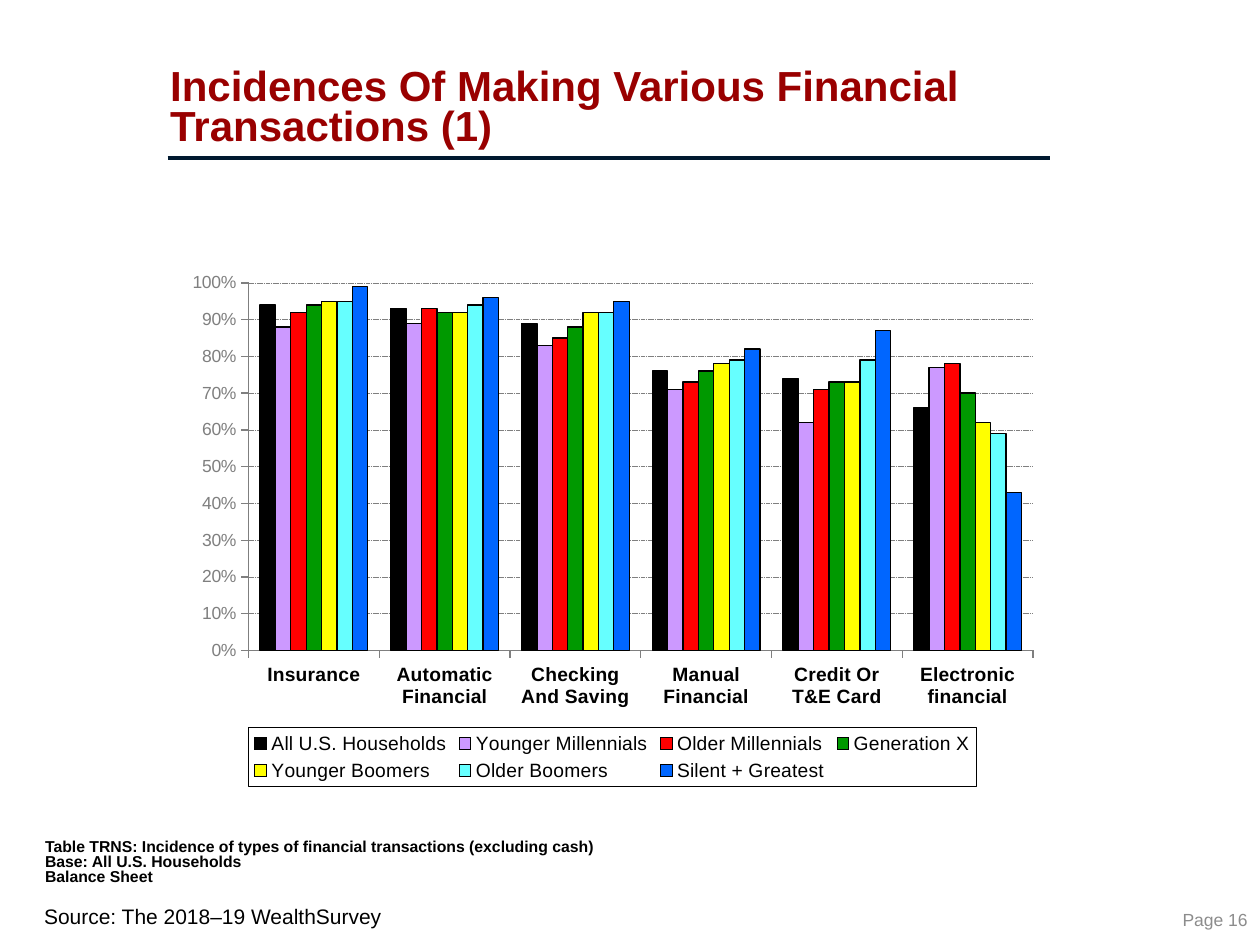
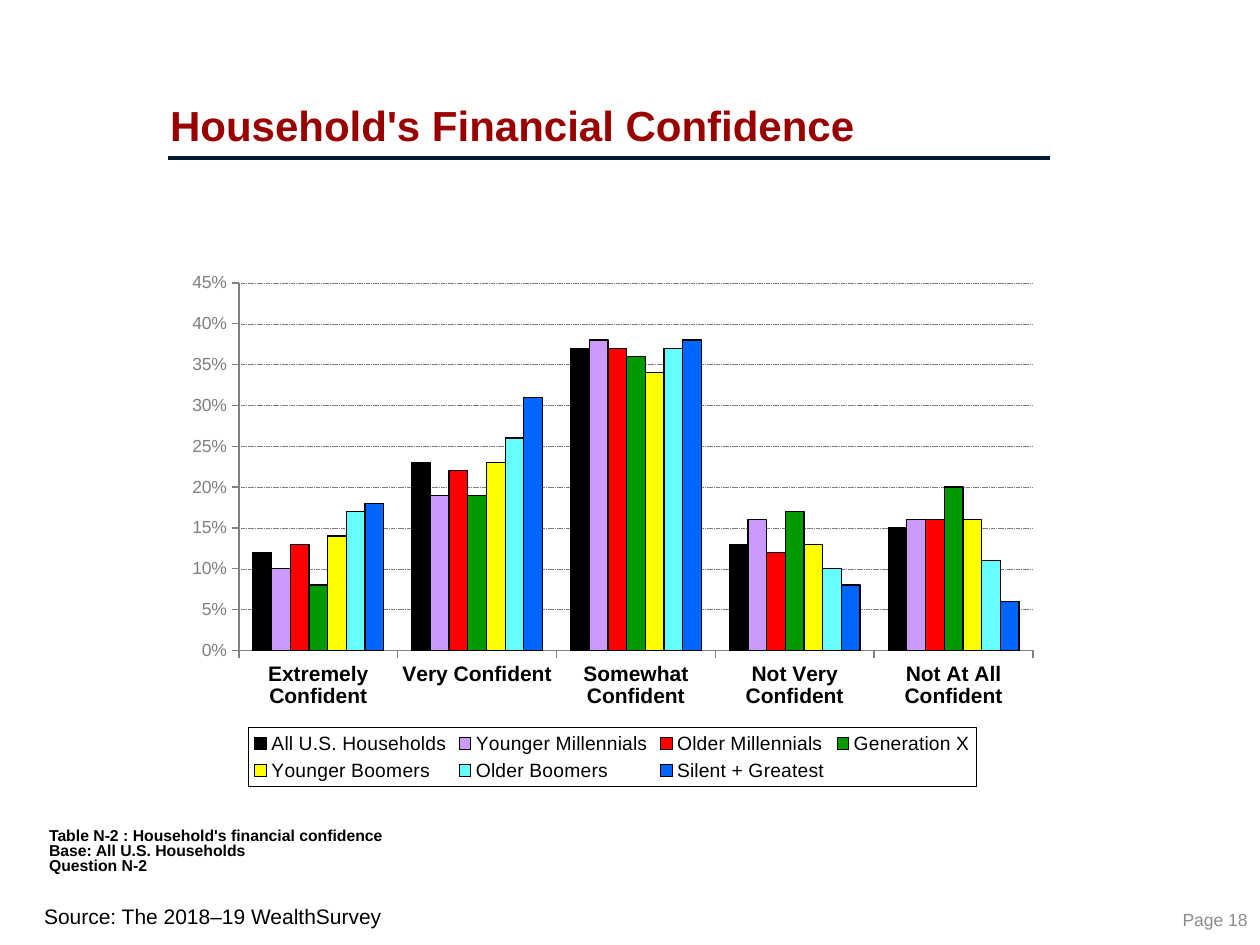
from dataclasses import dataclass

from pptx import Presentation
from pptx.chart.data import CategoryChartData
from pptx.dml.color import RGBColor
from pptx.enum.chart import XL_CHART_TYPE, XL_LEGEND_POSITION, XL_TICK_MARK
from pptx.enum.dml import MSO_LINE
from pptx.enum.shapes import MSO_CONNECTOR
from pptx.enum.text import MSO_ANCHOR, MSO_AUTO_SIZE, PP_ALIGN
from pptx.oxml import parse_xml
from pptx.oxml.ns import nsdecls, qn
from pptx.util import Cm, Pt


@dataclass(frozen=True)
class Theme:
    font: str = "Arial"
    ink: str = "000000"
    heading: str = "990000"
    rule: str = "00192F"
    axis: str = "7F7F7F"
    page_number: str = "8C8C8C"
    title_size: int = 24
    source_size: int = 12
    legend_size: int = 11
    small_size: int = 10
    note_size: int = 9


THEME = Theme()

GENERATIONS = {
    "All U.S. Households": "000000",
    "Younger Millennials": "CC99FF",
    "Older Millennials": "FF0000",
    "Generation X": "009900",
    "Younger Boomers": "FFFF00",
    "Older Boomers": "66FFFF",
    "Silent + Greatest": "0066FF",
}
SOURCE = "Source: The 2018–19 WealthSurvey"

# Each row of values lists the generations in the order above.
SLIDES = [
    {
        "title": "Incidences Of Making Various Financial Transactions (1)",
        "values": {
            "Insurance": (0.94, 0.88, 0.92, 0.94, 0.95, 0.95, 0.99),
            "Automatic Financial": (0.93, 0.89, 0.93, 0.92, 0.92, 0.94, 0.96),
            "Checking And Saving": (0.89, 0.83, 0.85, 0.88, 0.92, 0.92, 0.95),
            "Manual Financial": (0.76, 0.71, 0.73, 0.76, 0.78, 0.79, 0.82),
            "Credit Or T&E Card": (0.74, 0.62, 0.71, 0.73, 0.73, 0.79, 0.87),
            "Electronic financial": (0.66, 0.77, 0.78, 0.7, 0.62, 0.59, 0.43),
        },
        "maximum": 1,
        "step": 0.1,
        "category_size": 11,
        "plot_left": 0.084,
        "notes": [
            "Table TRNS: Incidence of types of financial transactions (excluding cash)",
            "Base: All U.S. Households",
            "Balance Sheet",
        ],
        "notes_at": (0.81, 16.76),
        "page": "Page 16",
    },
    {
        "title": "Household's Financial Confidence",
        "values": {
            "Extremely Confident": (0.12, 0.1, 0.13, 0.08, 0.14, 0.17, 0.18),
            "Very Confident": (0.23, 0.19, 0.22, 0.19, 0.23, 0.26, 0.31),
            "Somewhat Confident": (0.37, 0.38, 0.37, 0.36, 0.34, 0.37, 0.38),
            "Not Very Confident": (0.13, 0.16, 0.12, 0.17, 0.13, 0.1, 0.08),
            "Not At All Confident": (0.15, 0.16, 0.16, 0.2, 0.16, 0.11, 0.06),
        },
        "maximum": 0.45,
        "step": 0.05,
        "category_size": 12,
        "plot_left": 0.073,
        "notes": [
            "Table N-2 : Household's financial confidence",
            "Base: All U.S. Households",
            "Question N-2",
        ],
        "notes_at": (0.89, 16.54),
        "page": "Page 18",
    },
]


def format_font(font, size, color=THEME.ink, bold=False):
    font.name = THEME.font
    font.size = Pt(size)
    font.bold = bold
    font.color.rgb = RGBColor.from_string(color)


def format_line(line, color, width):
    line.color.rgb = RGBColor.from_string(color)
    line.width = Pt(width)


def write_text(box, lines, *, size, color=THEME.ink, bold=False, align=PP_ALIGN.LEFT,
               anchor=MSO_ANCHOR.TOP, spacing=1.0, insets=(0.25, 0.13, 0.25, 0.13)):
    """Fill a box with one paragraph per line; insets run left, top, right, bottom."""
    frame = box.text_frame
    frame.word_wrap = True
    frame.auto_size = MSO_AUTO_SIZE.NONE
    frame.vertical_anchor = anchor
    (frame.margin_left, frame.margin_top,
     frame.margin_right, frame.margin_bottom) = map(Cm, insets)
    for index, line in enumerate(lines):
        para = frame.add_paragraph() if index else frame.paragraphs[0]
        para.alignment = align
        para.line_spacing = spacing
        para.space_before = Pt(0)
        span = para.add_run()
        span.text = line
        format_font(span.font, size, color, bold)


def add_text(page, place, lines, **style):
    write_text(page.shapes.add_textbox(*map(Cm, place)), lines, **style)


def add_title(page, text):
    title = page.shapes.title
    title.left, title.top, title.width, title.height = map(Cm, (3.43, 1.35, 17.81, 1.8))
    write_text(title, [text], size=THEME.title_size, color=THEME.heading, bold=True,
               anchor=MSO_ANCHOR.BOTTOM, spacing=0.8, insets=(0, 0, 0, 0.13))


def add_title_rule(page):
    rule = page.shapes.add_connector(MSO_CONNECTOR.STRAIGHT,
                                     *map(Cm, (3.38, 3.18, 21.16, 3.18)))
    format_line(rule.line, THEME.rule, 2)
    rule._element.spPr.append(parse_xml(f"<a:effectLst {nsdecls('a')}/>"))


def set_layout(element, position, place, inner=False):
    """Fix a chart part at x, y, w, h, given as fractions of the chart."""
    for layout in element.findall(qn("c:layout")):
        element.remove(layout)
    target = '<c:layoutTarget val="inner"/>' if inner else ""
    modes = '<c:xMode val="edge"/><c:yMode val="edge"/>'
    sizes = "".join(f'<c:{name} val="{value:.3f}"/>' for name, value in zip("xywh", place))
    element.insert(position, parse_xml(
        f"<c:layout {nsdecls('c')}><c:manualLayout>{target}{modes}{sizes}"
        "</c:manualLayout></c:layout>"))


def format_axis(axis, **font):
    axis.major_tick_mark = XL_TICK_MARK.OUTSIDE
    axis.minor_tick_mark = XL_TICK_MARK.NONE
    format_line(axis.format.line, THEME.axis, 0.75)
    format_font(axis.tick_labels.font, **font)


def add_legend(chart):
    chart.has_legend = True
    legend = chart.legend
    legend.position = XL_LEGEND_POSITION.BOTTOM
    legend.include_in_layout = False
    format_font(legend.font, THEME.legend_size)
    set_layout(legend._element, 1, (0.084, 0.887, 0.832, 0.112))
    legend._element.find(qn("c:overlay")).addnext(parse_xml(
        f'<c:spPr {nsdecls("c", "a")}><a:ln w="9525"><a:solidFill>'
        f'<a:srgbClr val="{THEME.ink}"/></a:solidFill></a:ln></c:spPr>'))


def add_generation_chart(page, content):
    data = CategoryChartData(number_format="0%")
    data.categories = list(content["values"])
    for name, values in zip(GENERATIONS, zip(*content["values"].values())):
        data.add_series(name, values)
    chart = page.shapes.add_chart(XL_CHART_TYPE.COLUMN_CLUSTERED,
                                  *map(Cm, (3.53, 5.28, 17.63, 10.59)), data).chart
    chart.has_title = False
    format_font(chart.font, THEME.small_size)

    plot = chart.plots[0]
    plot.gap_width = 150
    plot.overlap = 0
    plot.vary_by_categories = False
    for series, color in zip(plot.series, GENERATIONS.values()):
        series.format.fill.solid()
        series.format.fill.fore_color.rgb = RGBColor.from_string(color)
        series.invert_if_negative = False
        format_line(series.format.line, THEME.ink, 0.75)

    format_axis(chart.category_axis, size=content["category_size"], bold=True)
    scale = chart.value_axis
    format_axis(scale, size=THEME.small_size, color=THEME.axis)
    scale.minimum_scale = 0
    scale.maximum_scale = content["maximum"]
    scale.major_unit = content["step"]
    scale.tick_labels.number_format = "0%"
    scale.tick_labels.number_format_is_linked = False
    grid = scale.major_gridlines.format.line
    format_line(grid, THEME.axis, 0.25)
    grid.dash_style = MSO_LINE.SQUARE_DOT

    left = content["plot_left"]
    set_layout(chart._chartSpace.chart.plotArea, 0, (left, 0.04, 0.981 - left, 0.7), inner=True)
    add_legend(chart)


def build_page(deck, content):
    page = deck.slides.add_slide(deck.slide_layouts[5])
    add_text(page, (0.64, 18.08, 22.66, 0.76), [SOURCE], size=THEME.source_size)
    add_title_rule(page)
    add_title(page, content["title"])
    add_generation_chart(page, content)
    add_text(page, (*content["notes_at"], 22.1, 1.27), content["notes"],
             size=THEME.note_size, bold=True, anchor=MSO_ANCHOR.MIDDLE, spacing=0.8,
             insets=(0.1, 0.33, 0, 0.33))
    add_text(page, (23.52, 18.19, 1.88, 0.69), [content["page"]], size=THEME.small_size,
             color=THEME.page_number, align=PP_ALIGN.RIGHT, anchor=MSO_ANCHOR.MIDDLE,
             insets=(0, 0.13, 0.25, 0.13))


def main():
    deck = Presentation()
    deck.slide_width, deck.slide_height = Cm(25.4), Cm(19.05)
    for content in SLIDES:
        build_page(deck, content)
    deck.save("out.pptx")


if __name__ == "__main__":
    main()
